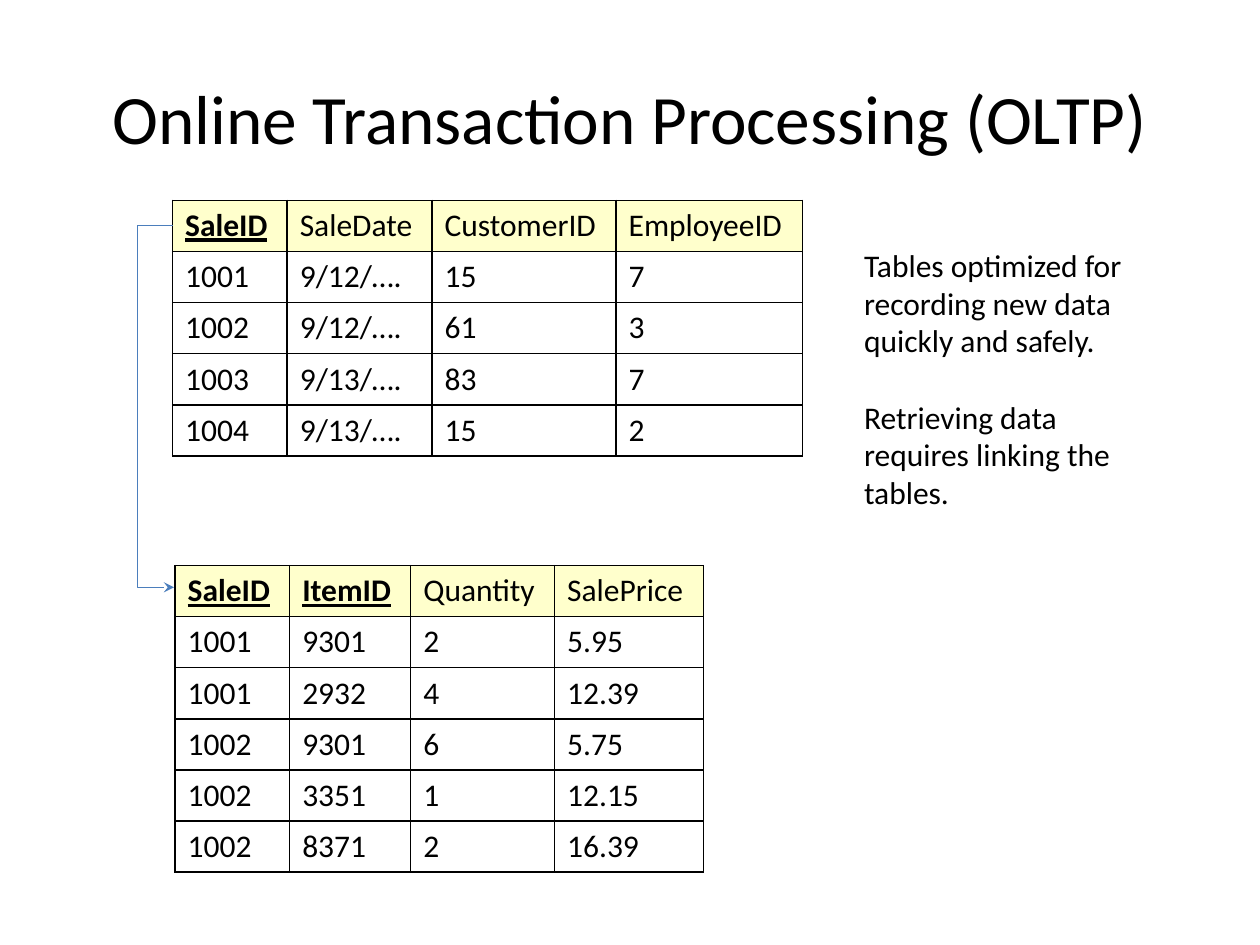
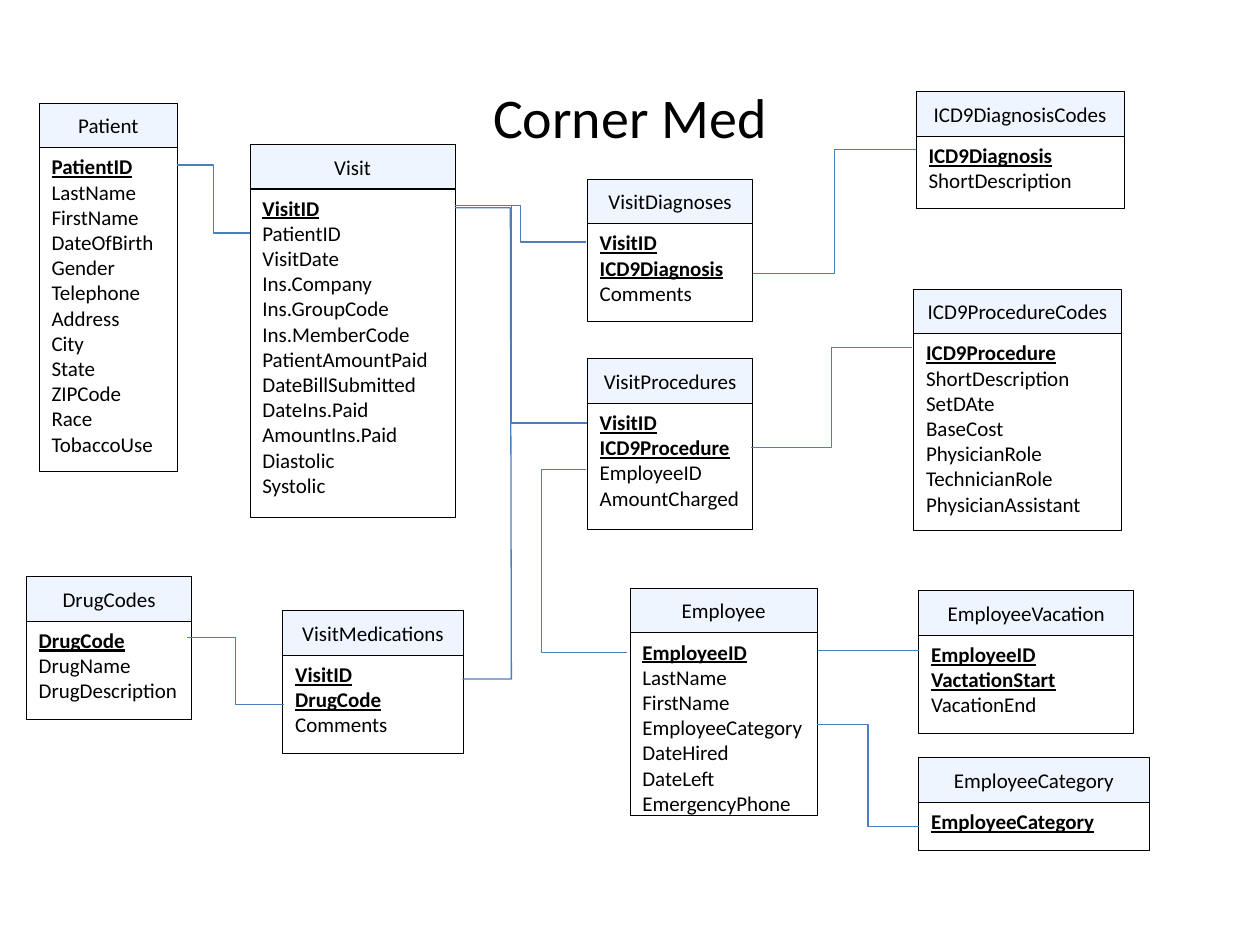
from pptx import Presentation
from pptx.dml.color import RGBColor
from pptx.enum.shapes import MSO_CONNECTOR, MSO_SHAPE
from pptx.enum.text import MSO_ANCHOR, PP_ALIGN
from pptx.oxml import parse_xml
from pptx.oxml.ns import nsdecls
from pptx.util import Cm, Pt

COLORS = {"ink": "000000", "key_row": "FFFFCC", "entity": "EFF5FF", "link": "4B7EBC"}
FONT = "Calibri"

OLTP_TITLE = "Online Transaction Processing (OLTP)"
REMARKS = [
    "Tables optimized for recording new data quickly and safely.",
    "Retrieving data requires linking the tables.",
]
REMARKS_AT = (17.17, 4.83, 6.12, 5.64)
ROW_HEIGHT = 1.03
SALE_TABLES = [
    dict(at=(3.48, 4.04), columns=(2.31, 2.92, 3.71, 3.76), keys=1, rows=[
        ("SaleID", "SaleDate", "CustomerID", "EmployeeID"),
        ("1001", "9/12/….", "15", "7"),
        ("1002", "9/12/….", "61", "3"),
        ("1003", "9/13/….", "83", "7"),
        ("1004", "9/13/….", "15", "2"),
    ]),
    dict(at=(3.53, 11.4), columns=(2.31, 2.44, 2.9, 3), keys=2, rows=[
        ("SaleID", "ItemID", "Quantity", "SalePrice"),
        ("1001", "9301", "2", "5.95"),
        ("1001", "2932", "4", "12.39"),
        ("1002", "9301", "6", "5.75"),
        ("1002", "3351", "1", "12.15"),
        ("1002", "8371", "2", "16.39"),
    ]),
]
SALE_LINK = [(3.48, 4.55), (2.77, 4.55), (2.77, 11.84), (3.51, 11.84)]

CLINIC_TITLE = "Corner Med"
HEADER_HEIGHT = 0.9
ENTITIES = [
    ("Patient", (0.79, 2.08, 2.79, 6.53), ["PatientID"],
     ["LastName", "FirstName", "DateOfBirth", "Gender", "Telephone", "Address",
      "City", "State", "ZIPCode", "Race", "TobaccoUse"]),
    ("Visit", (5.04, 2.91, 4.14, 6.62), ["VisitID"],
     ["PatientID", "VisitDate", "Ins.Company", "Ins.GroupCode", "Ins.MemberCode",
      "PatientAmountPaid", "DateBillSubmitted", "DateIns.Paid", "AmountIns.Paid",
      "Diastolic", "Systolic"]),
    ("VisitDiagnoses", (11.84, 3.61, 3.34, 1.98), ["VisitID", "ICD9Diagnosis"], ["Comments"]),
    ("DrugCodes", (0.53, 11.62, 3.34, 1.98), ["DrugCode"], ["DrugName", "DrugDescription"]),
    ("VisitMedications", (5.7, 12.31, 3.64, 1.98), ["VisitID", "DrugCode"], ["Comments"]),
    ("VisitProcedures", (11.84, 7.23, 3.34, 2.54), ["VisitID", "ICD9Procedure"],
     ["EmployeeID", "AmountCharged"]),
    ("ICD9DiagnosisCodes", (18.47, 1.85, 4.19, 1.45), ["ICD9Diagnosis"], ["ShortDescription"]),
    ("ICD9ProcedureCodes", (18.42, 5.83, 4.19, 3.96), ["ICD9Procedure"],
     ["ShortDescription", "SetDAte", "BaseCost", "PhysicianRole", "TechnicianRole",
      "PhysicianAssistant"]),
    ("Employee", (12.7, 11.86, 3.78, 3.68), ["EmployeeID"],
     ["LastName", "FirstName", "EmployeeCategory", "DateHired", "DateLeft", "EmergencyPhone"]),
    ("EmployeeVacation", (18.52, 11.91, 4.34, 1.98), ["EmployeeID", "VactationStart"],
     ["VacationEnd"]),
    ("EmployeeCategory", (18.52, 15.28, 4.65, 0.97), ["EmployeeCategory"], []),
]
DIRECT_LINKS = [
    (3.56, 3.33, 5.05, 4.7),
    (9.17, 4.14, 11.81, 4.88),
    (18.47, 3.02, 15.19, 5.51),
    (18.39, 7.01, 15.14, 9.02),
    (3.78, 12.85, 5.72, 14.2),
    (16.48, 13.11, 18.52, 13.11),
    (16.48, 14.61, 18.52, 16.66),
]
ROUTED_LINKS = [
    [(9.17, 4.19), (10.29, 4.19), (10.31, 13.69), (9.32, 13.69)],
    [(9.19, 4.14), (10.31, 4.14), (10.31, 8.53), (11.84, 8.53)],
    [(12.65, 13.16), (10.92, 13.16), (10.92, 9.47), (11.81, 9.47)],
]


def rgb(color):
    return RGBColor.from_string(COLORS[color])


def add_text(paragraph, text, size, key=False):
    run = paragraph.add_run()
    run.text = text
    font = run.font
    font.name, font.size, font.color.rgb = FONT, Pt(size), rgb("ink")
    font.bold = font.underline = key


def add_title(slide, text, size):
    frame = slide.shapes.add_textbox(Cm(1.27), Cm(0.76), Cm(22.86), Cm(3.18)).text_frame
    frame.word_wrap = True
    frame.vertical_anchor = MSO_ANCHOR.MIDDLE
    frame.paragraphs[0].alignment = PP_ALIGN.CENTER
    add_text(frame.paragraphs[0], text, size)


def add_remarks(slide):
    frame = slide.shapes.add_textbox(*map(Cm, REMARKS_AT)).text_frame
    frame.word_wrap = True
    for index, remark in enumerate(REMARKS):
        paragraph = frame.paragraphs[0] if index == 0 else frame.add_paragraph()
        paragraph.space_before = Pt(22 if index else 0)
        add_text(paragraph, remark, 18)


def add_borders(cell):
    properties = cell._tc.get_or_add_tcPr()
    for position, side in enumerate("LRTB"):
        properties.insert(position, parse_xml(
            f'<a:ln{side} {nsdecls("a")} w="{Pt(1)}"><a:solidFill>'
            f'<a:srgbClr val="{COLORS["ink"]}"/></a:solidFill></a:ln{side}>'))


def add_sale_table(slide, at, columns, keys, rows):
    table = slide.shapes.add_table(
        len(rows), len(columns), Cm(at[0]), Cm(at[1]),
        Cm(sum(columns)), Cm(ROW_HEIGHT * len(rows))).table
    table.first_row = table.horz_banding = False
    for column, width in zip(table.columns, columns):
        column.width = Cm(width)
    for r, values in enumerate(rows):
        table.rows[r].height = Cm(ROW_HEIGHT)
        for c, value in enumerate(values):
            cell = table.cell(r, c)
            if r == 0:
                cell.fill.solid()
                cell.fill.fore_color.rgb = rgb("key_row")
            else:
                cell.fill.background()
            add_borders(cell)
            add_text(cell.text_frame.paragraphs[0], value, 18, r == 0 and c < keys)


def style_link(link):
    link.line.color.rgb = rgb("link")
    link.line.width = Pt(0.75)


def add_routed_link(slide, points, arrow=False):
    start, *corners = [(Cm(x), Cm(y)) for x, y in points]
    builder = slide.shapes.build_freeform(*start)
    builder.add_line_segments(corners, close=False)
    link = builder.convert_to_shape()
    link.shadow.inherit = False
    link.fill.background()
    style_link(link)
    if arrow:
        link.line._get_or_add_ln().append(
            parse_xml(f'<a:tailEnd {nsdecls("a")} type="stealth"/>'))


def add_direct_link(slide, x1, y1, x2, y2):
    route = MSO_CONNECTOR.STRAIGHT if y1 == y2 else MSO_CONNECTOR.ELBOW
    link = slide.shapes.add_connector(route, Cm(x1), Cm(y1), Cm(x2), Cm(y2))
    style_link(link)
    link._element.spPr.append(parse_xml(f'<a:effectLst {nsdecls("a")}/>'))


def add_box(slide, left, top, width, height):
    box = slide.shapes.add_shape(
        MSO_SHAPE.RECTANGLE, Cm(left), Cm(top), Cm(width), Cm(height))
    box.shadow.inherit = False
    box.fill.background()
    box.line.color.rgb = rgb("ink")
    box.line.width = Pt(0.5)
    return box


def add_entity(slide, name, at, keys, fields):
    left, top, width, body_height = at
    frame = add_box(slide, left, top + HEADER_HEIGHT, width, body_height).text_frame
    frame.word_wrap = True
    frame.vertical_anchor = MSO_ANCHOR.TOP
    for index, field in enumerate(keys + fields):
        paragraph = frame.paragraphs[0] if index == 0 else frame.add_paragraph()
        paragraph.alignment = PP_ALIGN.LEFT
        add_text(paragraph, field, 12, index < len(keys))
    header = add_box(slide, left, top, width, HEADER_HEIGHT)
    header.fill.solid()
    header.fill.fore_color.rgb = rgb("entity")
    header.text_frame.word_wrap = False
    header.text_frame.vertical_anchor = MSO_ANCHOR.MIDDLE
    caption = header.text_frame.paragraphs[0]
    caption.alignment = PP_ALIGN.CENTER
    add_text(caption, name, 12)


def main():
    deck = Presentation()
    deck.slide_width, deck.slide_height = Cm(25.4), Cm(19.05)
    blank = deck.slide_layouts[6]

    oltp = deck.slides.add_slide(blank)
    add_title(oltp, OLTP_TITLE, 39.6)
    for sale_table in SALE_TABLES:
        add_sale_table(oltp, **sale_table)
    add_routed_link(oltp, SALE_LINK, arrow=True)
    add_remarks(oltp)

    clinic = deck.slides.add_slide(blank)
    add_title(clinic, CLINIC_TITLE, 32)
    for entity in ENTITIES:
        add_entity(clinic, *entity)
    for ends in DIRECT_LINKS:
        add_direct_link(clinic, *ends)
    for points in ROUTED_LINKS:
        add_routed_link(clinic, points)

    deck.save("out.pptx")


if __name__ == "__main__":
    main()
